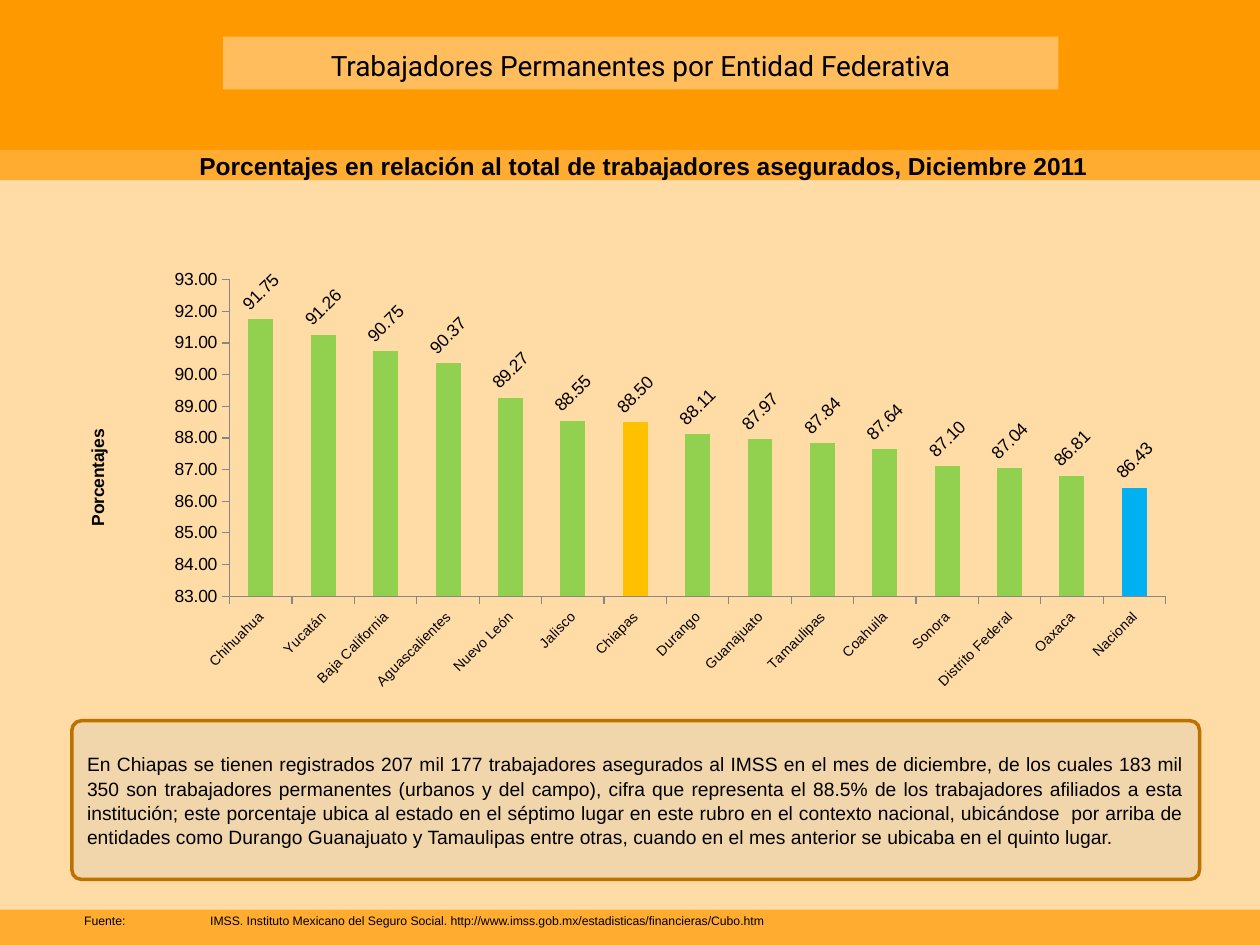
import pptx
import pptx.chart.data
import pptx.dml.color
import pptx.enum.chart
import pptx.enum.shapes
import pptx.enum.text
import pptx.oxml
import pptx.oxml.ns
import pptx.util

COLORS = {
    "background": "FFDBA6", "header": "FF9900", "band": "FFAC31", "title": "FFBD5D",
    "note": "F1D5AB", "border": "BD7100", "text": "000000", "axis": "868686",
    "state": "92D050", "chiapas": "FFC000", "national": "00B0F0",
}
COLORS = {name: pptx.dml.color.RGBColor.from_string(code) for name, code in COLORS.items()}

deck = pptx.Presentation()
deck.slide_width = pptx.util.Inches(10)
deck.slide_height = pptx.util.Inches(7.5)
page = deck.slides.add_slide(deck.slide_layouts[5])
page.background.fill.solid()
page.background.fill.fore_color.rgb = COLORS["background"]

# Grid of 100 columns by 75 rows
COLUMN = deck.slide_width / 100
ROW = deck.slide_height / 75


def area(left, top, width, height):
    return [int(left * COLUMN), int(top * ROW), int(width * COLUMN), int(height * ROW)]


def set_layout(parent, position, values):
    """Insert a manual chart layout as the child at the given position."""
    settings = "".join(f'<c:{key} val="{value}"/>' for key, value in values.items())
    for old in parent.findall(pptx.oxml.ns.qn("c:layout")):
        parent.remove(old)
    parent.insert(position, pptx.oxml.parse_xml(
        f'<c:layout {pptx.oxml.ns.nsdecls("c")}><c:manualLayout>{settings}'
        '</c:manualLayout></c:layout>'))


# Header and footer bands
for color, top, height in [("header", 0, 13.1), ("band", 11.9, 2.4), ("band", 72.2, 2.8)]:
    band = page.shapes.add_shape(
        pptx.enum.shapes.MSO_SHAPE.RECTANGLE, *area(0, top, 100, height))
    band.shadow.inherit = False
    band.fill.solid()
    band.fill.fore_color.rgb = COLORS[color]
    band.line.fill.background()

# Note box
note = page.shapes.add_shape(
    pptx.enum.shapes.MSO_SHAPE.ROUNDED_RECTANGLE, *area(5.7, 57.2, 89.5, 12.6))
note.adjustments[0] = 0.06
note.shadow.inherit = False
note.fill.solid()
note.fill.fore_color.rgb = COLORS["note"]
note.line.color.rgb = COLORS["border"]
note.line.width = pptx.util.Pt(2)

# Title, brought in front of the bands
title = page.shapes.title
title.left, title.top, title.width, title.height = area(17.7, 2.9, 66.3, 4.2)
title.fill.solid()
title.fill.fore_color.rgb = COLORS["title"]
page.shapes._spTree.append(title._element)

subtitle = page.shapes.add_textbox(*area(14.2, 11.5, 73.8, 3.4))
source = page.shapes.add_textbox(*area(5.7, 72, 57.5, 2.2))

# Source line tab stop
source_para = source.text_frame.paragraphs[0]
source_para._p.get_or_add_pPr().append(pptx.oxml.parse_xml(
    f'<a:tabLst {pptx.oxml.ns.nsdecls("a")}>'
    f'<a:tab pos="{pptx.util.Inches(1)}" algn="l"/></a:tabLst>'))

# Wording
ALIGN = pptx.enum.text.PP_ALIGN
ANCHOR = pptx.enum.text.MSO_ANCHOR
texts = [
    (title, "Trabajadores Permanentes por Entidad Federativa",
     "Roboto", 16, False, ALIGN.CENTER, ANCHOR.MIDDLE),
    (subtitle, "Porcentajes en relación al total de trabajadores asegurados, Diciembre 2011",
     "Arial", 14, True, ALIGN.CENTER, ANCHOR.TOP),
    (note, "En Chiapas se tienen registrados 207 mil 177 trabajadores asegurados al IMSS en el "
     "mes de diciembre, de los cuales 183 mil 350 son trabajadores permanentes (urbanos y del "
     "campo), cifra que representa el 88.5% de los trabajadores afiliados a esta institución; "
     "este porcentaje ubica al estado en el séptimo lugar en este rubro en el contexto "
     "nacional, ubicándose  por arriba de entidades como Durango Guanajuato y Tamaulipas entre "
     "otras, cuando en el mes anterior se ubicaba en el quinto lugar.",
     "Arial", 11, False, ALIGN.JUSTIFY, ANCHOR.MIDDLE),
    (source, "Fuente:\tIMSS. Instituto Mexicano del Seguro Social. "
     "http://www.imss.gob.mx/estadisticas/financieras/Cubo.htm",
     "Arial", 7, False, ALIGN.LEFT, ANCHOR.TOP),
]
for box, wording, font_name, size, bold, alignment, anchor in texts:
    frame = box.text_frame
    frame.word_wrap = box is not source
    frame.auto_size = pptx.enum.text.MSO_AUTO_SIZE.NONE
    frame.vertical_anchor = anchor
    para = frame.paragraphs[0]
    para.text = wording
    para.alignment = alignment
    for span in para.runs:
        span.font.name = font_name
        span.font.size = pptx.util.Pt(size)
        span.font.bold = bold
        span.font.color.rgb = COLORS["text"]
title.text_frame.margin_top = pptx.util.Inches(0.08)
note.text_frame.paragraphs[0].line_spacing = 1.05

# Column chart
shares = {
    "Chihuahua": 91.75, "Yucatán": 91.26, "Baja California": 90.75, "Aguascalientes": 90.37,
    "Nuevo León": 89.27, "Jalisco": 88.55, "Chiapas": 88.5, "Durango": 88.11,
    "Guanajuato": 87.97, "Tamaulipas": 87.84, "Coahuila": 87.64, "Sonora": 87.1,
    "Distrito Federal": 87.04, "Oaxaca": 86.81, "Nacional": 86.43,
}
chart_data = pptx.chart.data.CategoryChartData(number_format="#,##0.00")
chart_data.categories = list(shares)
chart_data.add_series("Porcentajes", list(shares.values()))
chart = page.shapes.add_chart(
    pptx.enum.chart.XL_CHART_TYPE.COLUMN_CLUSTERED, *area(5.7, 17.7, 89.5, 37.5),
    chart_data).chart
chart.has_legend = False
chart.has_title = False
chart.font.name = "Arial"
chart.font.size = pptx.util.Pt(10)
chart.font.color.rgb = COLORS["text"]
set_layout(chart._chartSpace.chart.plotArea, 0, {
    "layoutTarget": "inner", "xMode": "edge", "yMode": "edge",
    "x": 0.14, "y": 0.12, "w": 0.83, "h": 0.67})

# Columns, with the state and the national figure picked out
plot = chart.plots[0]
plot.gap_width = 150
plot.vary_by_categories = False
series = plot.series[0]
series.format.fill.solid()
series.format.fill.fore_color.rgb = COLORS["state"]
for place, color in [("Chiapas", "chiapas"), ("Nacional", "national")]:
    fill = series.points[list(shares).index(place)].format.fill
    fill.solid()
    fill.fore_color.rgb = COLORS[color]

# Axes
for axis in (chart.category_axis, chart.value_axis):
    axis.has_major_gridlines = False
    axis.major_tick_mark = pptx.enum.chart.XL_TICK_MARK.OUTSIDE
    axis.minor_tick_mark = pptx.enum.chart.XL_TICK_MARK.NONE
    axis.format.line.color.rgb = COLORS["axis"]
chart.category_axis.tick_labels.font.size = pptx.util.Pt(8)
value_axis = chart.value_axis
value_axis.minimum_scale, value_axis.maximum_scale, value_axis.major_unit = 83, 93, 1
value_axis.tick_labels.number_format = "#,##0.00"
value_axis.tick_labels.number_format_is_linked = False
value_axis.axis_title.text_frame.text = "Porcentajes"
axis_font = value_axis.axis_title.text_frame.paragraphs[0].runs[0].font
axis_font.name = "Arial"
axis_font.size = pptx.util.Pt(10)
axis_font.bold = True
axis_font.color.rgb = COLORS["text"]
axis_body = value_axis.axis_title.text_frame._txBody.bodyPr
axis_body.set("rot", "-5400000")
axis_body.set("vert", "horz")
set_layout(value_axis.axis_title._element, 1, {
    "xMode": "edge", "yMode": "edge", "x": 0.01, "y": 0.43})

# Data labels, slanted like the category names
plot.has_data_labels = True
labels = plot.data_labels
labels.show_value = True
labels.number_format = "#,##0.00"
labels.number_format_is_linked = False
labels.position = pptx.enum.chart.XL_LABEL_POSITION.OUTSIDE_END
labels.font.size = pptx.util.Pt(10)
for owner in (labels._element, chart.category_axis._element):
    slanted = owner.find(pptx.oxml.ns.qn("c:txPr")).find(pptx.oxml.ns.qn("a:bodyPr"))
    slanted.set("rot", "-2700000")
    slanted.set("vert", "horz")

deck.save("out.pptx")
